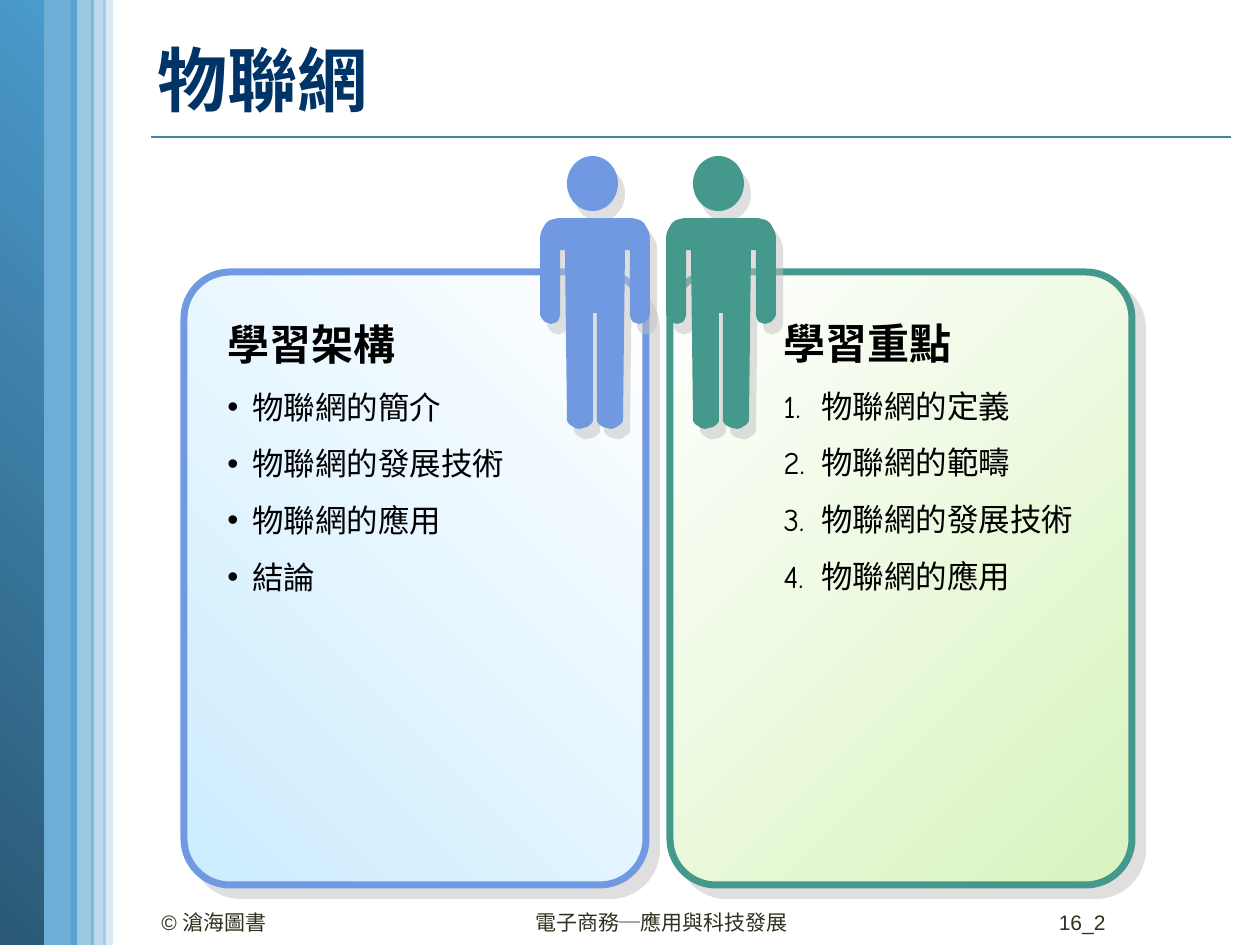
"""Build the chapter overview slide with two figure-topped panels."""
from lxml.etree import SubElement
from pptx import Presentation
from pptx.dml.color import RGBColor
from pptx.enum.shapes import MSO_CONNECTOR, MSO_SHAPE
from pptx.enum.text import MSO_ANCHOR, MSO_AUTO_SIZE, PP_ALIGN
from pptx.oxml.ns import qn
from pptx.util import Pt

SCALE = 914400 / 126
COLORS = {
    "sky": "4A9ACC", "deep": "2B5976", "rule": "4582A7", "title": "003366",
    "footer": "30311D", "ink": "000000", "white": "FFFFFF", "ice": "CCECFF",
    "lime": "D8F4BE", "blue": "7099E2", "green": "44988C", "shade": "C0C0C0",
}
TITLE = "物聯網"
BANDS = [(38, 39, 80), (0, 44, None), (103, 10, 20), (71, 23, 54), (91, 15, 37)]
FOOTERS = [
    ("© 滄海圖書", 149, 294, PP_ALIGN.LEFT),
    ("電子商務─應用與科技發展", 523, 297, PP_ALIGN.LEFT),
    ("16_2", 1027, 91, PP_ALIGN.RIGHT),
]
PANELS = [
    {"heading": "學習架構", "bullet": "•", "hang": 25,
     "items": ["物聯網的簡介", "物聯網的發展技術", "物聯網的應用", "結論"],
     "left": 184, "person": 540, "box": (215, 287, 391, 318),
     "color": "blue", "stops": ("ice", "white"), "angle": 45},
    {"heading": "學習重點", "bullet": None, "hang": 38,
     "items": ["1.\t物聯網的定義", "2.\t物聯網的範疇", "3.\t物聯網的發展技術", "4.\t物聯網的應用"],
     "left": 670, "person": 666, "box": (771, 286, 357, 324),
     "color": "green", "stops": ("white", "lime"), "angle": 315},
]
PERSON_WIDTH = 110
HALF_BODY = [
    (18, 0), (14, 1), (10, 2), (6, 5), (3, 10), (1, 14), (0, 19), (0, 97),
    (2, 101), (5, 104), (8, 105), (11, 106), (14, 105), (17, 104), (19, 101),
    (20, 97), (20, 32), (25, 32), (27, 203), (29, 206), (32, 208), (35, 210),
    (39, 211), (43, 210), (47, 209), (50, 207), (52, 205), (53, 203), (53, 95),
]


def px(length):
    return round(length * SCALE)


def rgb(name):
    return RGBColor.from_string(COLORS[name])


def add_block(shapes, preset, box, color, alpha=None):
    block = shapes.add_shape(preset, *map(px, box))
    block.shadow.inherit = False
    block.line.fill.background()
    block.fill.solid()
    block.fill.fore_color.rgb = rgb(color)
    if alpha:
        fill_color = block.fill._xPr.find(".//" + qn("a:srgbClr"))
        SubElement(fill_color, qn("a:alpha"), val=str(alpha * 1000))
    return block


def set_gradient(block, stops, angle):
    block.fill.gradient()
    block.fill.gradient_angle = angle
    for stop, color in zip(block.fill.gradient_stops, stops):
        stop.color.rgb = rgb(color)


def cast_shadow(block, distance, angle):
    block.shadow.inherit = False
    effects = block._element.spPr.find(qn("a:effectLst"))
    outer = SubElement(effects, qn("a:outerShdw"), blurRad="0", dist=str(Pt(distance)),
                       dir=str(angle * 60000), algn="ctr", rotWithShape="0")
    tint = SubElement(outer, qn("a:srgbClr"), val=COLORS["shade"])
    SubElement(tint, qn("a:alpha"), val="50000")


def add_words(shapes, box, lines, **frame_format):
    frame = shapes.add_textbox(*map(px, box)).text_frame
    for name, value in {"word_wrap": True, **frame_format}.items():
        setattr(frame, name, value)
    for index, (words, font_format, color, para_format, hang, bullet) in enumerate(lines):
        para = frame.paragraphs[0] if index == 0 else frame.add_paragraph()
        para.text = words
        for name, value in para_format.items():
            setattr(para, name, value)
        if hang:
            props = para._p.get_or_add_pPr()
            props.set("marL", str(px(hang)))
            props.set("indent", str(-px(hang)))
            if bullet:
                SubElement(props, qn("a:buFont"), typeface="Arial")
                SubElement(props, qn("a:buChar"), char=bullet)
        font = para.runs[0].font
        for name, value in font_format.items():
            setattr(font, name, value)
        font.color.rgb = rgb(color)


def add_person(shapes, left, color):
    head = add_block(shapes, MSO_SHAPE.OVAL, (left + 27, 156, 51, 55), color)
    mirrored = [(PERSON_WIDTH - x, y) for x, y in reversed(HALF_BODY)]
    outline = [(px(left + x), px(218 + y)) for x, y in HALF_BODY + mirrored]
    builder = shapes.build_freeform(*outline[0])
    builder.add_line_segments(outline[1:], close=True)
    body = builder.convert_to_shape()
    body.fill.solid()
    body.fill.fore_color.rgb = rgb(color)
    body.line.fill.background()
    for part in (head, body):
        cast_shadow(part, 7.2, 56)


def add_panel(shapes, panel):
    card = add_block(shapes, MSO_SHAPE.ROUNDED_RECTANGLE,
                     (panel["left"], 272, 462, 613), panel["color"])
    card.adjustments[0] = 0.1
    set_gradient(card, panel["stops"], panel["angle"])
    card.line.color.rgb = rgb(panel["color"])
    card.line.width = Pt(4)
    cast_shadow(card, 8.5, 45)
    add_person(shapes, panel["person"], panel["color"])
    spacing = {"line_spacing": 1.5}
    heading_font = {"name": "Comic Neue", "size": Pt(24), "bold": True}
    item_font = {"name": "Comic Neue", "size": Pt(18), "bold": False}
    lines = [(panel["heading"], heading_font, "ink", spacing, 0, None)]
    lines += [(item, item_font, "ink", spacing, panel["hang"], panel["bullet"])
              for item in panel["items"]]
    add_words(shapes, panel["box"], lines, auto_size=MSO_AUTO_SIZE.SHAPE_TO_FIT_TEXT)


def main():
    deck = Presentation()
    deck.slide_width, deck.slide_height = px(1260), px(945)
    shapes = deck.slides.add_slide(deck.slide_layouts[6]).shapes

    rule = shapes.add_connector(MSO_CONNECTOR.STRAIGHT, px(151), px(137), px(1231), px(137))
    rule.line.color.rgb = rgb("rule")
    rule.line.width = Pt(1)
    SubElement(rule._element.spPr, qn("a:effectLst"))

    for left, width, alpha in BANDS:
        band = add_block(shapes, MSO_SHAPE.RECTANGLE, (left, 0, width, 945), "sky", alpha)
        if alpha is None:
            set_gradient(band, ("deep", "sky"), 45)

    title_font = {"name": "Comic Neue", "size": Pt(40), "bold": True}
    add_words(shapes, (145, 9, 1096, 140), [(TITLE, title_font, "title", {}, 0, None)],
              vertical_anchor=MSO_ANCHOR.MIDDLE)
    for panel in PANELS:
        add_panel(shapes, panel)
    footer_font = {"name": "Arial", "size": Pt(12)}
    for words, left, width, alignment in FOOTERS:
        add_words(shapes, (left, 903, width, 33),
                  [(words, footer_font, "footer", {"alignment": alignment}, 0, None)])
    deck.save("out.pptx")


if __name__ == "__main__":
    main()
